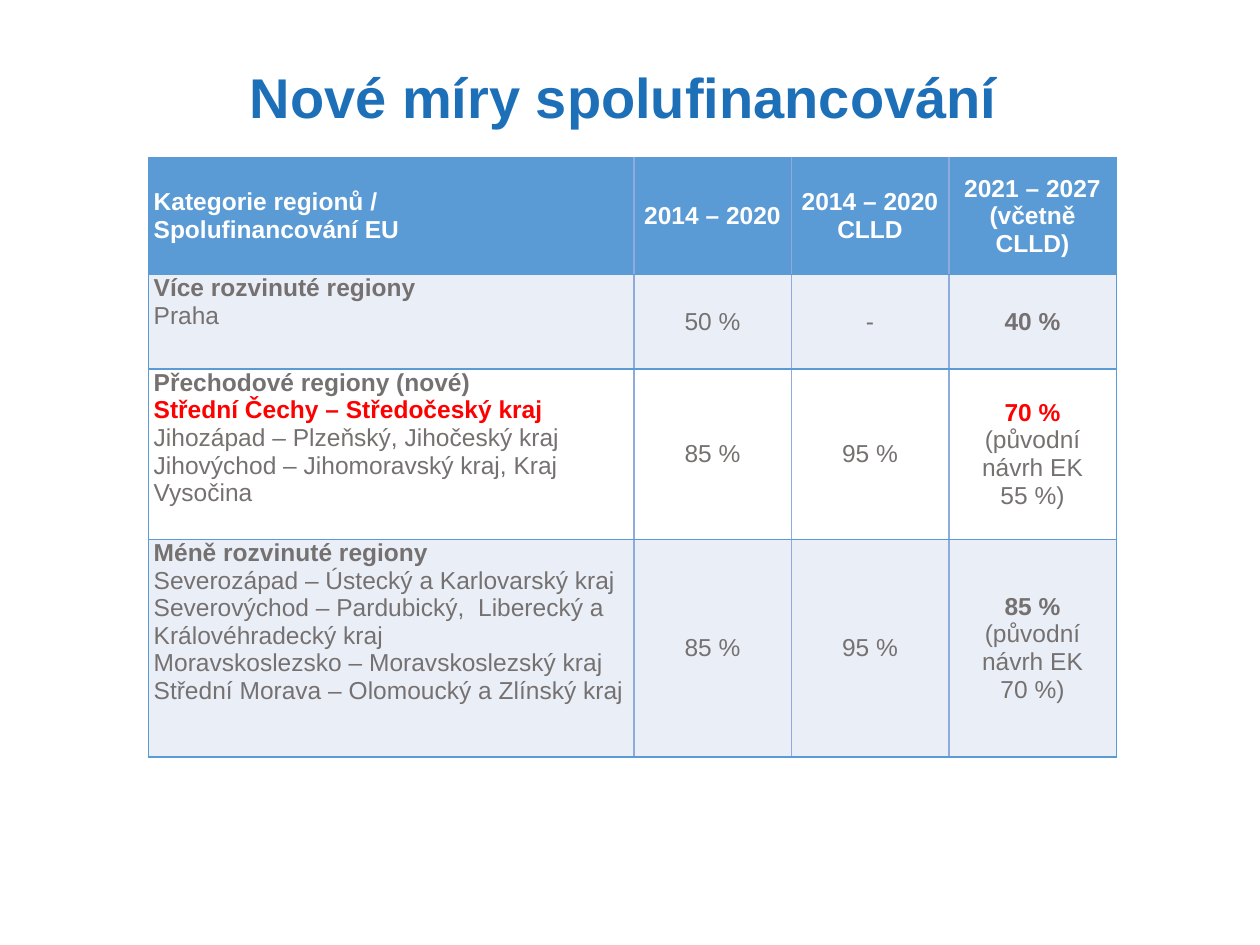
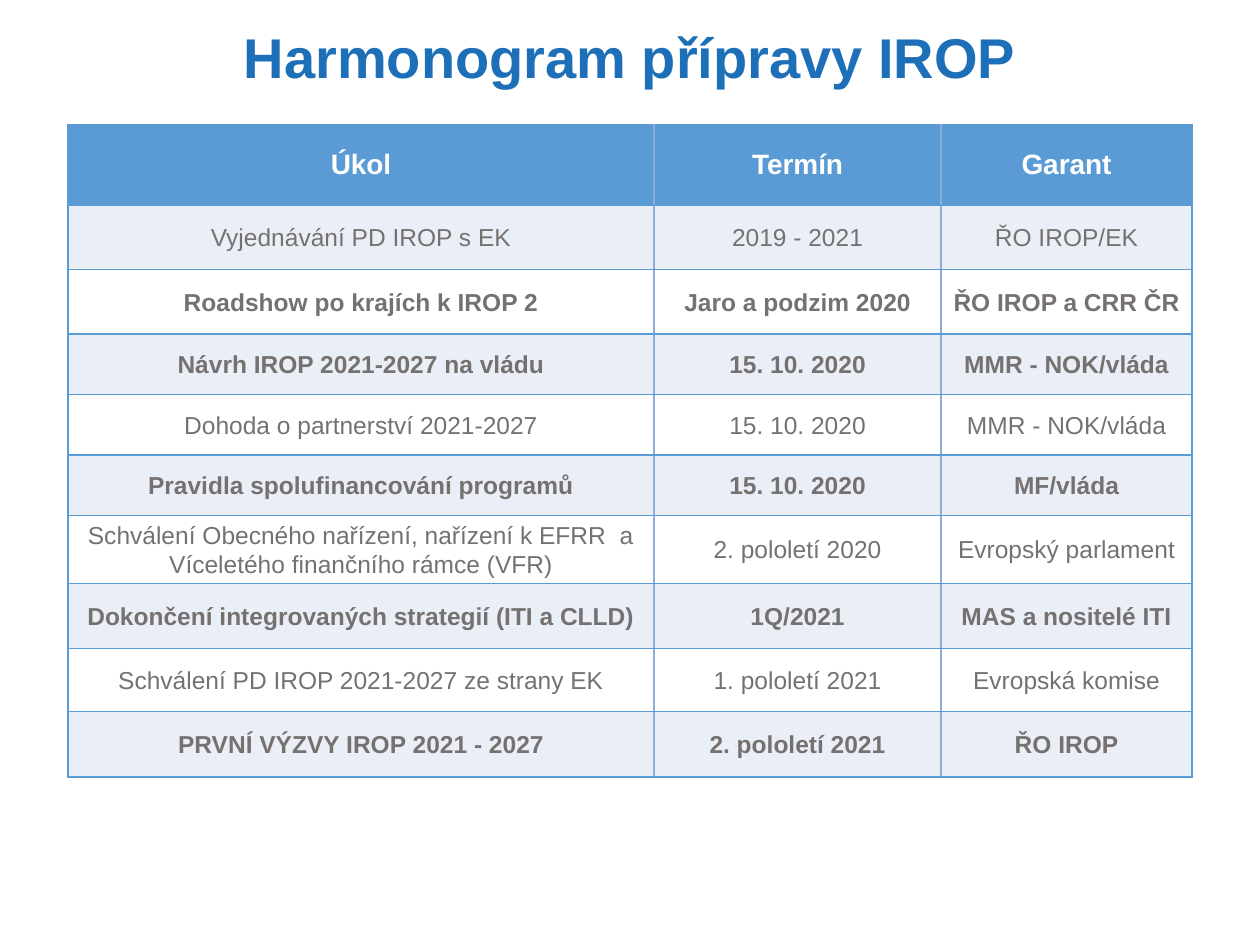
from lxml.etree import SubElement
from pptx import Presentation
from pptx.dml.color import RGBColor as Rgb
from pptx.enum.text import MSO_ANCHOR as Anchor, PP_ALIGN as Align
from pptx.oxml.ns import qn
from pptx.util import Inches, Pt

COLORS = {
    "title": "1D70B8",
    "header": "5B9BD5",
    "divider": "8FAADC",
    "band": "EAEFF7",
    "white": "FFFFFF",
    "text": "767171",
    "alert": "FF0000",
}
FONT = "Arial"
STYLES = {
    "header": {"color": "white", "bold": True},
    "plain": {"color": "text", "bold": False},
    "bold": {"color": "text", "bold": True},
    "alert": {"color": "alert", "bold": True},
}

RATES = [
    [
        [("Kategorie regionů /", "header"), ("Spolufinancování EU", "header")],
        [("2014 – 2020", "header")],
        [("2014 – 2020", "header"), ("CLLD", "header")],
        [("2021 – 2027", "header"), ("(včetně CLLD)", "header")],
    ],
    [
        [("Více rozvinuté regiony", "bold"), ("Praha", "plain")],
        [("50 %", "plain")],
        [("-", "plain")],
        [("40 %", "bold")],
    ],
    [
        [
            ("Přechodové regiony (nové)", "bold"),
            ("Střední Čechy – Středočeský kraj", "alert"),
            ("Jihozápad – Plzeňský, Jihočeský kraj", "plain"),
            ("Jihovýchod – Jihomoravský kraj, Kraj Vysočina", "plain"),
        ],
        [("85 %", "plain")],
        [("95 %", "plain")],
        [("70 %", "alert"), ("(původní návrh EK", "plain"), ("55 %)", "plain")],
    ],
    [
        [
            ("Méně rozvinuté regiony", "bold"),
            ("Severozápad – Ústecký a Karlovarský kraj", "plain"),
            ("Severovýchod – Pardubický,  Liberecký a Královéhradecký kraj", "plain"),
            ("Moravskoslezsko – Moravskoslezský kraj", "plain"),
            ("Střední Morava – Olomoucký a Zlínský kraj", "plain"),
        ],
        [("85 %", "plain")],
        [("95 %", "plain")],
        [("85 %", "bold"), ("(původní návrh EK", "plain"), ("70 %)", "plain")],
    ],
]

SCHEDULE = [
    ("header", "Úkol", "Termín", "Garant"),
    ("plain", "Vyjednávání PD IROP s EK", "2019 - 2021", "ŘO IROP/EK"),
    ("bold", "Roadshow po krajích k IROP 2", "Jaro a podzim 2020", "ŘO IROP a CRR ČR"),
    ("bold", "Návrh IROP 2021-2027 na vládu", "15. 10. 2020", "MMR - NOK/vláda"),
    ("plain", "Dohoda o partnerství 2021-2027", "15. 10. 2020", "MMR - NOK/vláda"),
    ("bold", "Pravidla spolufinancování programů", "15. 10. 2020", "MF/vláda"),
    ("plain", "Schválení Obecného nařízení, nařízení k EFRR  a Víceletého finančního rámce (VFR)",
     "2. pololetí 2020", "Evropský parlament"),
    ("bold", "Dokončení integrovaných strategií (ITI a CLLD)", "1Q/2021", "MAS a nositelé ITI"),
    ("plain", "Schválení PD IROP 2021-2027 ze strany EK", "1. pololetí 2021", "Evropská komise"),
    ("bold", "PRVNÍ VÝZVY IROP 2021 - 2027", "2. pololetí 2021", "ŘO IROP"),
]

SLIDES = [
    {
        "title": "Nové míry spolufinancování",
        "title_box": (0.66, 0.29, 8.58, 1.01),
        "title_bottom": 0.05,
        "cells": RATES,
        "corner": (1.18, 1.25),
        "columns": [3.85, 1.25, 1.25, 1.33],
        "rows": [0.93, 0.75, 1.35, 1.73],
        "margin": 0.04,
        "header_size": 14,
        "spacing": 1.0,
        "labels_left": True,
    },
    {
        "title": "Harmonogram přípravy IROP",
        "title_box": (0.69, 0.06, 8.62, 1.37),
        "title_bottom": 0.58,
        "cells": [[[(text, style)] for text in texts] for style, *texts in SCHEDULE],
        "corner": (0.54, 0.99),
        "columns": [4.65, 2.28, 1.99],
        "rows": [0.64, 0.51, 0.51, 0.48, 0.48, 0.48, 0.54, 0.52, 0.5, 0.52],
        "margin": 0.07,
        "header_size": 16,
        "spacing": 1.07,
        "labels_left": False,
    },
]
BODY_SIZE = 14
TITLE_SIZE = 32


def set_all(target, values):
    for name, value in values.items():
        setattr(target, name, value)


def write(paragraph, text, size, color, bold, align, spacing):
    run = paragraph.add_run()
    run.text = text
    set_all(run.font, {"name": FONT, "size": Pt(size), "bold": bold})
    run.font.color.rgb = Rgb.from_string(COLORS[color])
    set_all(paragraph, {"alignment": align, "line_spacing": spacing,
                        "space_before": Pt(0), "space_after": Pt(0)})


def set_borders(cell, sides):
    properties = cell._tc.get_or_add_tcPr()
    for index, (side, color) in enumerate(sides.items()):
        line = SubElement(properties, qn(f"a:ln{side}"), w=str(Pt(1)))
        fill = SubElement(line, qn("a:solidFill"))
        SubElement(fill, qn("a:srgbClr"), val=COLORS[color])
        properties.insert(index, line)


def add_title(slide, content):
    title = slide.shapes.title
    box = dict(zip(("left", "top", "width", "height"), map(Inches, content["title_box"])))
    set_all(title, box)
    frame = title.text_frame
    set_all(frame, {"word_wrap": True, "vertical_anchor": Anchor.MIDDLE,
                    "margin_left": Inches(0.1), "margin_right": Inches(0.1),
                    "margin_top": Inches(0.05),
                    "margin_bottom": Inches(content["title_bottom"])})
    write(frame.paragraphs[0], content["title"], TITLE_SIZE, "title", True, Align.CENTER, 0.9)


def fill_cell(cell, lines, row, column, content):
    is_label = column == 0 and content["labels_left"]
    last = len(content["columns"]) - 1
    margin = Inches(content["margin"])
    set_all(cell, {"margin_left": margin, "margin_right": margin,
                   "margin_top": 0, "margin_bottom": 0,
                   "vertical_anchor": Anchor.TOP if is_label and row else Anchor.MIDDLE})
    cell.fill.solid()
    background = "header" if row == 0 else "band" if row % 2 else "white"
    cell.fill.fore_color.rgb = Rgb.from_string(COLORS[background])
    set_borders(cell, {"L": "divider" if column else "header",
                       "R": "divider" if column < last else "header",
                       "T": "header", "B": "header"})
    frame = cell.text_frame
    for index, (text, style) in enumerate(lines):
        paragraph = frame.add_paragraph() if index else frame.paragraphs[0]
        write(paragraph, text, BODY_SIZE if row else content["header_size"],
              **STYLES[style], align=Align.LEFT if is_label else Align.CENTER,
              spacing=content["spacing"] if row else 1.0)


def add_grid(slide, content):
    columns, rows = content["columns"], content["rows"]
    size = (sum(columns), sum(rows))
    table = slide.shapes.add_table(len(rows), len(columns),
                                   *map(Inches, content["corner"] + size)).table
    set_all(table, {"first_row": False, "horz_banding": False})
    for column, width in zip(table.columns, columns):
        column.width = Inches(width)
    for row, height in zip(table.rows, rows):
        row.height = Inches(height)
    for row, cells in enumerate(content["cells"]):
        for column, lines in enumerate(cells):
            fill_cell(table.cell(row, column), lines, row, column, content)


def main():
    presentation = Presentation()
    set_all(presentation, {"slide_width": Inches(10), "slide_height": Inches(7.5)})
    title_only = presentation.slide_layouts[5]
    for content in SLIDES:
        slide = presentation.slides.add_slide(title_only)
        add_title(slide, content)
        add_grid(slide, content)
    presentation.save("out.pptx")


if __name__ == "__main__":
    main()
